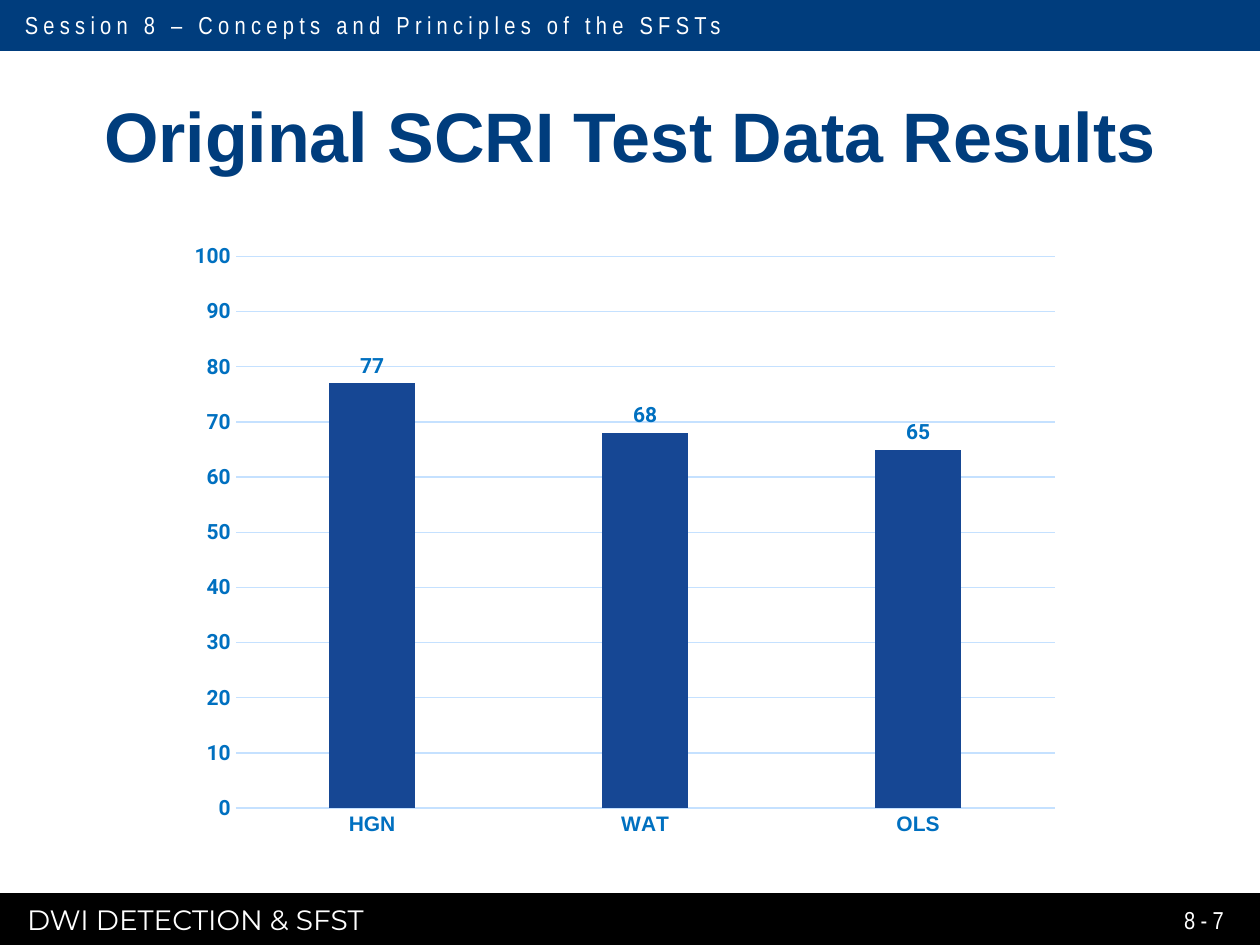
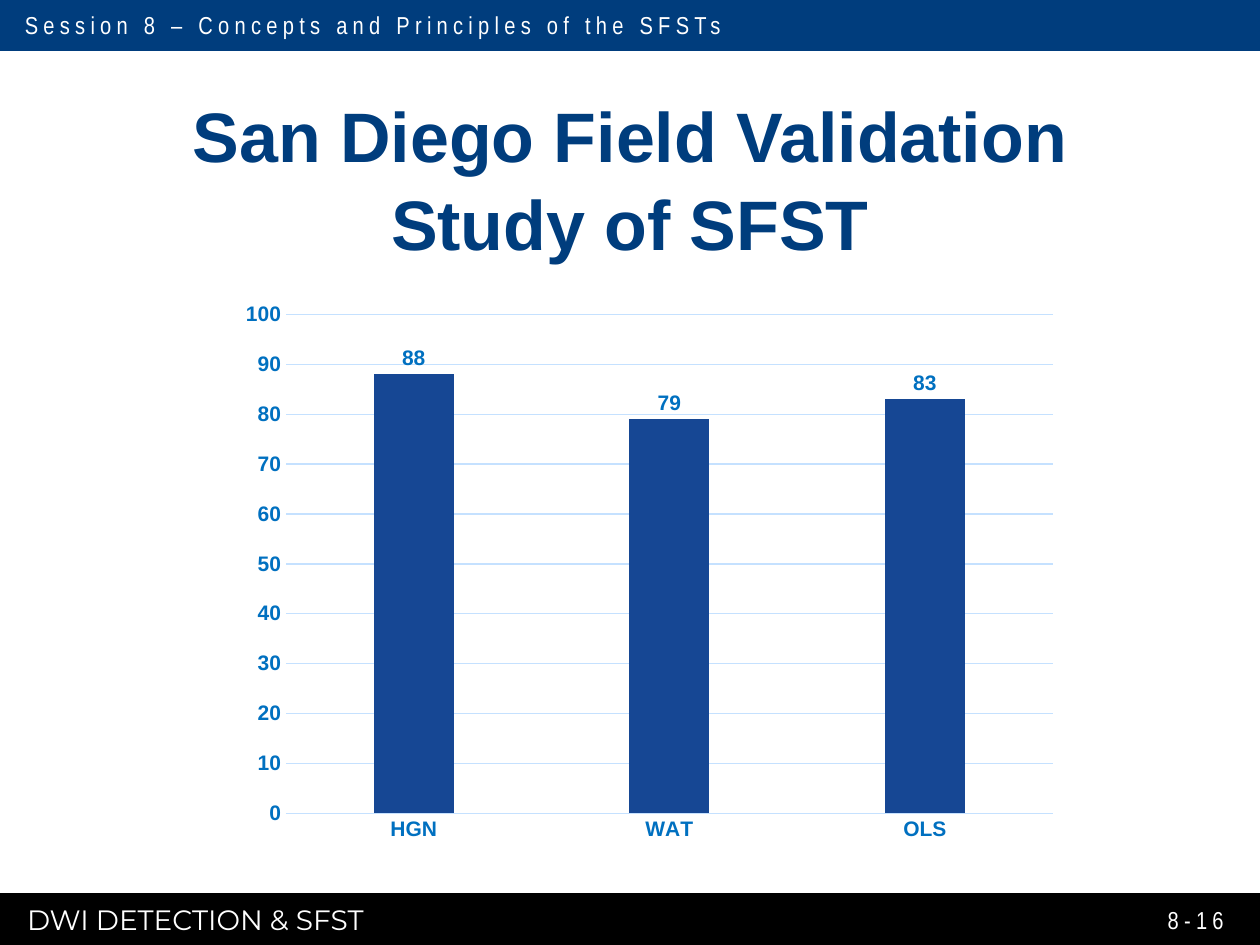
"""Builds two SFST study slides, each a title over a column chart."""
from dataclasses import dataclass

import pptx
import pptx.chart.data
import pptx.dml.color
import pptx.enum.chart
import pptx.enum.shapes
import pptx.enum.text
import pptx.util

Cm = pptx.util.Cm
Pt = pptx.util.Pt
ALIGN = pptx.enum.text.PP_ALIGN


@dataclass(frozen=True)
class Theme:
    """Colours, fonts and type sizes of the deck."""
    navy: str = "003D7D"
    black: str = "000000"
    white: str = "FFFFFF"
    bar: str = "164794"
    label: str = "0070C0"
    grid: str = "C5E1FF"
    sans: str = "Arial"
    narrow: str = "Arial Narrow"
    footer: str = "Montserrat"
    chart: str = "Roboto"
    title_size: int = 40
    footer_size: int = 16
    band_size: int = 14
    chart_size: int = 10
    label_size: int = 12


T = Theme()
WIDTH, HEIGHT = 25.4, 19.05
HEADER = (0, 0, WIDTH, 1)
FOOTER = (0, 18.03, WIDTH, 1.02)
SESSION = "Session 8 – Concepts and Principles of the SFSTs"
COURSE = "DWI DETECTION & SFST"
TESTS = ("HGN", "WAT", "OLS")


def rgb(code):
    """Return the colour for a hex code."""
    return pptx.dml.color.RGBColor.from_string(code)


def place(box):
    """Convert a box in centimetres to slide lengths."""
    return [Cm(v) for v in box]


def style(font, size, color, name, bold=False):
    """Format any font object."""
    font.size, font.name, font.bold = Pt(size), name, bold
    font.color.rgb = rgb(color)


def add_text(s, box, text, size, color, name, bold=False, align=ALIGN.LEFT,
             spacing=0, leading=1.0, inset=None):
    """Add a vertically centred text box; newlines become line breaks."""
    tf = s.shapes.add_textbox(*place(box)).text_frame
    tf.word_wrap = True
    tf.vertical_anchor = pptx.enum.text.MSO_ANCHOR.MIDDLE
    if inset is not None:
        tf.margin_left = tf.margin_right = Cm(inset)
        tf.margin_top = tf.margin_bottom = Cm(inset)
    p = tf.paragraphs[0]
    p.alignment, p.line_spacing = align, leading
    for i, line in enumerate(text.split("\n")):
        if i:
            p.add_line_break()
        r = p.add_run()
        r.text = line
        style(r.font, size, color, name, bold)
        if spacing:
            r.font._element.set("spc", str(spacing * 100))


def add_band(s, box, color):
    """Add a full-width coloured band."""
    sp = s.shapes.add_shape(pptx.enum.shapes.MSO_SHAPE.RECTANGLE, *place(box))
    sp.shadow.inherit = False
    sp.fill.solid()
    sp.fill.fore_color.rgb = sp.line.color.rgb = rgb(color)
    sp.line.width = Pt(2)


def add_header(s, box):
    """Add the session band at the top."""
    x, y, w, h = box
    add_band(s, box, T.navy)
    add_text(s, (x + 0.25, y, w - 3.5, h), SESSION, T.band_size, T.white,
             T.narrow, spacing=3)


def add_footer(s, box, number):
    """Add the course band and page number at the bottom."""
    x, y, w, h = box
    add_band(s, box, T.black)
    add_text(s, (x + 0.3, y, 17.68, h), COURSE, T.footer_size, T.white, T.footer)
    add_text(s, (x + w - 6.4, y, 5.92, h), number, T.band_size, T.white,
             T.narrow, align=ALIGN.RIGHT, spacing=3)


def add_title(s, box, text):
    """Add the centred slide title."""
    add_text(s, box, text, T.title_size, T.navy, T.sans, bold=True,
             align=ALIGN.CENTER, leading=1.05, inset=0)


def add_results(s, box, values, number_font):
    """Add the column chart of results by test."""
    data = pptx.chart.data.CategoryChartData()
    data.categories = TESTS
    data.add_series("Series 1", values)
    kind = pptx.enum.chart.XL_CHART_TYPE.COLUMN_CLUSTERED
    chart = s.shapes.add_chart(kind, *place(box), data).chart
    chart.has_legend = chart.has_title = False
    style(chart.font, T.chart_size, T.navy, T.chart)

    cat, val = chart.category_axis, chart.value_axis
    for axis, name in ((cat, T.sans), (val, number_font)):
        axis.major_tick_mark = pptx.enum.chart.XL_TICK_MARK.NONE
        axis.minor_tick_mark = pptx.enum.chart.XL_TICK_MARK.NONE
        style(axis.tick_labels.font, T.label_size, T.label, name, bold=True)
    val.minimum_scale, val.maximum_scale, val.major_unit = 0, 100, 10
    val.has_major_gridlines = True
    val.format.line.fill.background()
    for line in (cat.format.line, val.major_gridlines.format.line):
        line.color.rgb = rgb(T.grid)
        line.width = Pt(0.75)

    plot = chart.plots[0]
    plot.gap_width, plot.overlap, plot.vary_by_categories = 219, -27, False
    fill = plot.series[0].format.fill
    fill.solid()
    fill.fore_color.rgb = rgb(T.bar)
    plot.has_data_labels = True
    labels = plot.data_labels
    labels.show_value = True
    labels.position = pptx.enum.chart.XL_LABEL_POSITION.OUTSIDE_END
    style(labels.font, T.label_size, T.label, number_font, bold=True)


def add_study(prs, number, title, title_box, values, chart_box, number_font):
    """Add one study slide."""
    s = prs.slides.add_slide(prs.slide_layouts[6])
    add_header(s, HEADER)
    add_footer(s, FOOTER, number)
    add_title(s, title_box, title)
    add_results(s, chart_box, values, number_font)


def main():
    """Build and save the deck."""
    prs = pptx.Presentation()
    prs.slide_width, prs.slide_height = Cm(WIDTH), Cm(HEIGHT)
    add_study(prs, "8-7", "Original SCRI Test Data Results",
              (1.27, 1.78, 22.86, 1.78), (77, 68, 65),
              (3.56, 4.67, 18.06, 12.42), T.chart)
    add_study(prs, "8-16", "San Diego Field Validation\nStudy of SFST",
              (0.85, 1.47, 23.7, 4.17), (88, 79, 83),
              (4.62, 5.89, 16.94, 11.28), T.sans)
    prs.save("out.pptx")


if __name__ == "__main__":
    main()
